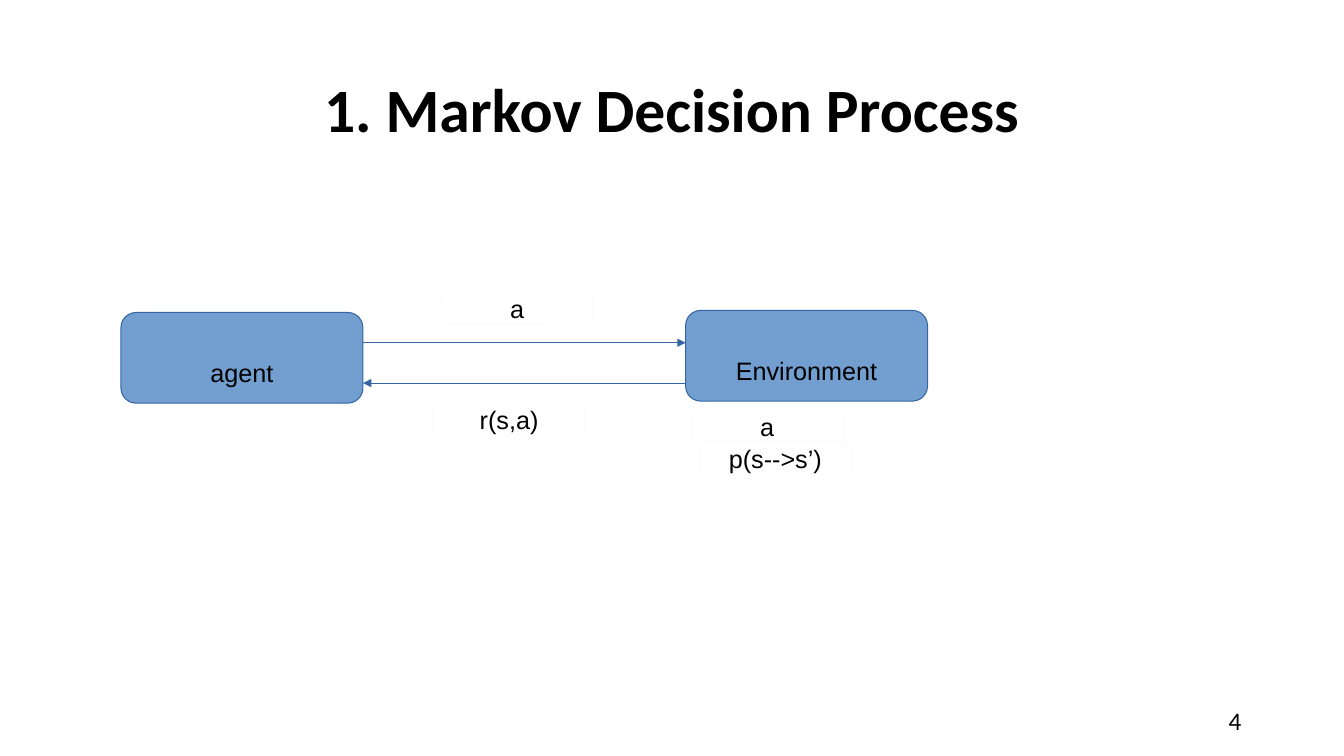
import pptx
import pptx.dml.color
import pptx.enum.shapes
import pptx.enum.text
import pptx.oxml.ns
import pptx.util
from lxml import etree

RGB = pptx.dml.color.RGBColor
BLACK = RGB(0x00, 0x00, 0x00)
WHITE = RGB(0xFF, 0xFF, 0xFF)
BLUE = RGB(0x72, 0x9F, 0xCF)
DARK_BLUE = RGB(0x34, 0x65, 0xA4)
PALE = RGB(0xFA, 0xFC, 0xFD)

ALIGN = pptx.enum.text.PP_ALIGN
CELL = 0.1
LINE_HEIGHT = 2.88
NODE_SIZE = (24, 9)
LABEL_SIZE = (15, 3)


def grid(n):
    return pptx.util.Inches(n * CELL)


def set_text(sp, text, size, font, align, bold=False):
    tf = sp.text_frame
    tf.vertical_anchor = pptx.enum.text.MSO_ANCHOR.MIDDLE
    p = tf.paragraphs[0]
    p.alignment = align
    r = p.add_run()
    r.text = text
    r.font.size = pptx.util.Pt(size)
    r.font.name = font
    r.font.bold = bold
    r.font.color.rgb = BLACK
    return tf


def add_text(s, box, text, size, align, bold=False):
    sp = s.shapes.add_textbox(*map(grid, box))
    tf = set_text(sp, text, size, "Calibri", align, bold)
    tf.word_wrap = True
    return tf


def add_rounded(s, col, row, size, text, fill, line):
    kind = pptx.enum.shapes.MSO_SHAPE.ROUNDED_RECTANGLE
    sp = s.shapes.add_shape(kind, *map(grid, (col, row, *size)))
    sp.shadow.inherit = False
    sp.fill.solid()
    sp.fill.fore_color.rgb = fill
    sp.line.color.rgb = line
    sp.line.width = pptx.util.Pt(0.75)
    set_text(sp, text, 18, "Arial", ALIGN.CENTER).word_wrap = False
    return sp


def add_node(s, col, row, text):
    sp = add_rounded(s, col, row, NODE_SIZE, text, BLUE, DARK_BLUE)
    sp.text_frame.margin_top = grid(0.5 + LINE_HEIGHT)


def add_label(s, col, row, text):
    add_rounded(s, col, row, LABEL_SIZE, text, WHITE, PALE)


def add_arrow(s, start, end, row):
    kind = pptx.enum.shapes.MSO_CONNECTOR.STRAIGHT
    c = s.shapes.add_connector(kind, *map(grid, (start, row, end, row)))
    c.line.color.rgb = DARK_BLUE
    c.line.width = pptx.util.Pt(0.75)
    qn = pptx.oxml.ns.qn
    etree.SubElement(c.line._get_or_add_ln(), qn("a:tailEnd"), type="triangle")
    etree.SubElement(c._element.spPr, qn("a:effectLst"))


def main():
    prs = pptx.Presentation()
    prs.slide_width = pptx.util.Inches(13.33)
    prs.slide_height = pptx.util.Inches(7.5)
    s = prs.slides.add_slide(prs.slide_layouts[6])

    title = add_text(s, (9.2, 4, 114.9, 14.4), "1. Markov Decision Process",
                     44, ALIGN.CENTER, bold=True)
    title.paragraphs[0].line_spacing = 0.9
    add_text(s, (94.2, 69.5, 29.9, 3.9), "4", 18, ALIGN.RIGHT)

    agent, environment = 12, 68
    add_node(s, agent, 31, "agent")
    add_node(s, environment, 30.8, "Environment")

    for col, row, text in (
        (43.8, 29.1, "a"),
        (43, 40.1, "r(s,a)"),
        (68.6, 40.8, "a"),
        (69.4, 44, "p(s-->s’)"),
    ):
        add_label(s, col, row, text)

    agent_edge = agent + NODE_SIZE[0]
    add_arrow(s, agent_edge, environment, 34)
    add_arrow(s, environment, agent_edge, 38)

    prs.save("out.pptx")


if __name__ == "__main__":
    main()
